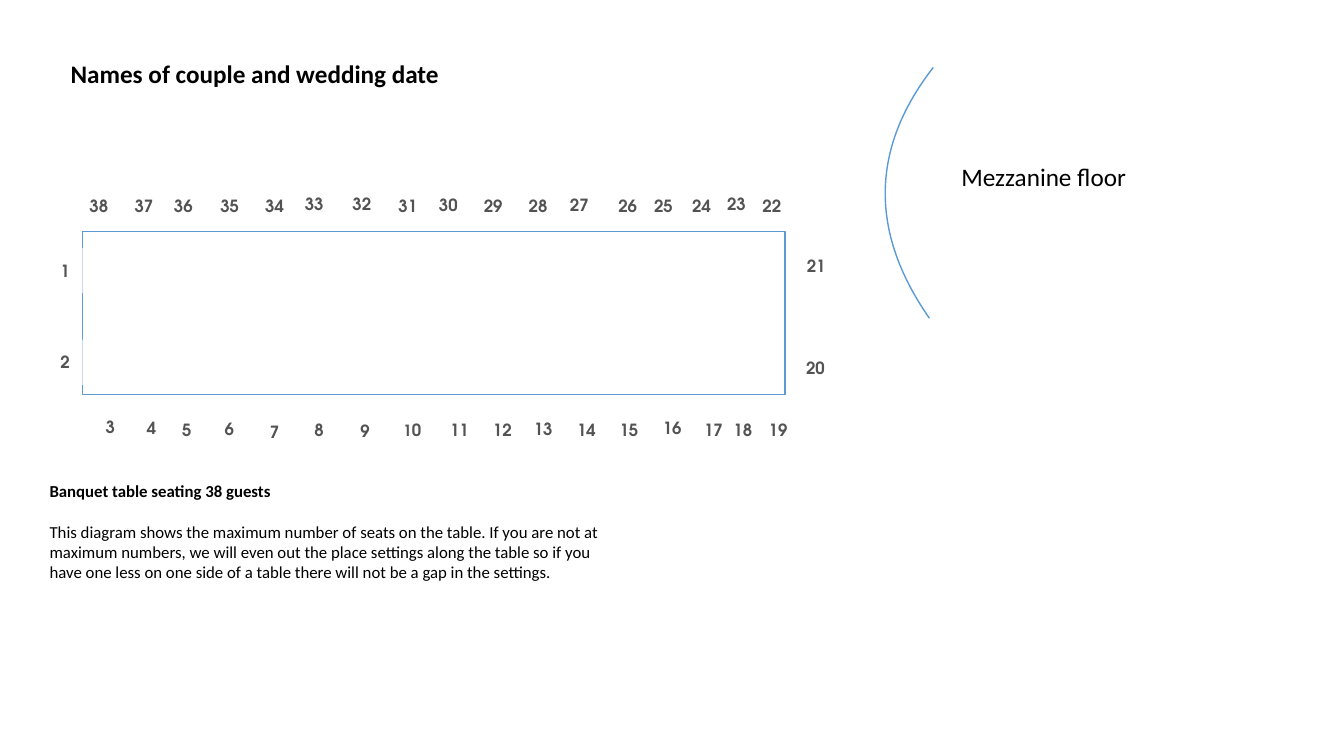
from pptx import Presentation
from pptx.dml.color import RGBColor
from pptx.enum.shapes import MSO_SHAPE as Shape
from pptx.enum.text import MSO_ANCHOR as Anchor, MSO_AUTO_SIZE as Fit, PP_ALIGN as Align
from pptx.util import Cm, Pt

BODY = "Calibri"
SEAT = "TeX Gyre Adventor"
BLUE = "5B9BD5"
GREY = "535353"
BLACK = "000000"
WHITE = "FFFFFF"

TOP = [0.41, 1.55, 2.54, 3.71, 4.84, 5.84, 7.04, 8.2, 9.22, 10.35,
       11.48, 12.52, 13.74, 14.64, 15.6, 16.48, 17.37]
RAISED = {33: -0.7, 32: -0.71, 30: -0.69, 27: -0.69, 23: -0.71}
BASE = [(0.7, 4.91), (1.74, 4.94), (2.63, 4.99), (3.7, 4.97), (4.84, 5.04),
        (5.96, 4.99), (7.12, 5.02), (8.31, 5), (9.5, 4.98), (10.58, 4.98),
        (11.61, 4.97), (12.7, 4.98), (13.77, 5), (14.86, 4.95), (15.9, 4.98),
        (16.64, 4.98), (17.53, 4.98)]
ENDS = {1: (-0.44, 0.98), 2: (-0.44, 3.29), 20: (18.47, 3.42), 21: (18.49, 0.86)}
CLEAR = {5, 10, 15, 16, 17, 18, 19, 26, 31, 36, 38}


def color(code):
    return RGBColor.from_string(code)


def add_run(para, text, size, face, code, bold=False):
    run = para.add_run()
    run.text = text
    font = run.font
    font.size = Pt(size)
    font.name = face
    font.bold = bold
    font.color.rgb = color(code)


def style(shape, fill=None, line=None):
    shape.shadow.inherit = False
    if fill:
        shape.fill.solid()
        shape.fill.fore_color.rgb = color(fill)
    else:
        shape.fill.background()
    if line:
        shape.line.color.rgb = color(line)
        shape.line.width = Pt(1)
    else:
        shape.line.fill.background()


def add_note(slide, box, parts, size):
    shape = slide.shapes.add_textbox(*map(Cm, box))
    frame = shape.text_frame
    frame.word_wrap = True
    frame.auto_size = Fit.SHAPE_TO_FIT_TEXT
    frame.margin_left = frame.margin_right = Cm(0.13)
    frame.margin_top = frame.margin_bottom = Cm(0.13)
    for i, (text, bold) in enumerate(parts):
        para = frame.add_paragraph() if i else frame.paragraphs[0]
        if i:
            para.space_before = Pt(14.6)
        add_run(para, text, size, BODY, BLACK, bold)


def add_seat(group, num, x, y):
    if num in CLEAR:
        wide, high = 1.27, 1.27
    elif num < 10:
        wide, high = 0.89, 1.14
    else:
        wide, high = 1.22, 0.91
    box = map(Cm, (x - wide / 2, y - high / 2, wide, high))
    if num in CLEAR:
        shape = group.shapes.add_textbox(*box)
    else:
        shape = group.shapes.add_shape(Shape.RECTANGLE, *box)
        style(shape, WHITE)
    frame = shape.text_frame
    frame.word_wrap = True
    frame.vertical_anchor = Anchor.MIDDLE
    para = frame.paragraphs[0]
    para.alignment = Align.CENTER
    if num == 10:
        add_run(para, "1", 11, SEAT, GREY, True)
        add_run(para, "0", 12, SEAT, GREY, True)
    else:
        add_run(para, str(num), 12, SEAT, GREY, True)


def add_plan(slide, box):
    left, top = box[:2]
    group = slide.shapes.add_group_shape()
    table = group.shapes.add_shape(Shape.RECTANGLE, *map(Cm, box))
    style(table, line=BLUE)
    seats = dict(ENDS)
    seats.update(enumerate(BASE, 3))
    for i, x in enumerate(TOP):
        seats[38 - i] = x, RAISED.get(38 - i, -0.66)
    for num, (x, y) in sorted(seats.items()):
        add_seat(group, num, left + x, top + y)


def add_curve(slide, box):
    left, top, wide, high = box
    knots = [(0.92, 1), (-0.33, 0.655), (-0.29, 0.32), (1, 0)]
    dots = []
    for i in range(61):
        t = i / 60
        parts = [(1 - t) ** 3, 3 * t * (1 - t) ** 2, 3 * t * t * (1 - t), t ** 3]
        x = sum(p * k[0] for p, k in zip(parts, knots))
        y = sum(p * k[1] for p, k in zip(parts, knots))
        dots.append((Cm(left + wide * x), Cm(top + high * y)))
    pen = slide.shapes.build_freeform(*dots[0])
    pen.add_line_segments(dots[1:], close=False)
    style(pen.convert_to_shape(), line=BLUE)


def main():
    deck = Presentation()
    deck.slide_width, deck.slide_height = Cm(33.87), Cm(19.05)
    slide = deck.slides.add_slide(deck.slide_layouts[6])
    add_note(slide, (1.65, 1.35, 14.6, 1.02),
             [("Names of couple and wedding date", True)], 18)
    add_note(slide, (1.12, 11.99, 14.35, 2.82), [
        ("Banquet table seating 38 guests", True),
        ("This diagram shows the maximum number of seats on the table. "
         "If you are not at maximum numbers, we will even out the place "
         "settings along the table so if you have one less on one side of "
         "a table there will not be a gap in the settings.", False)], 12)
    add_curve(slide, (22.3, 1.7, 1.22, 6.32))
    add_note(slide, (24.1, 3.94, 5.03, 0.91), [("Mezzanine floor", False)], 18)
    add_plan(slide, (2.08, 5.84, 17.7, 4.11))
    deck.save("out.pptx")


if __name__ == "__main__":
    main()
